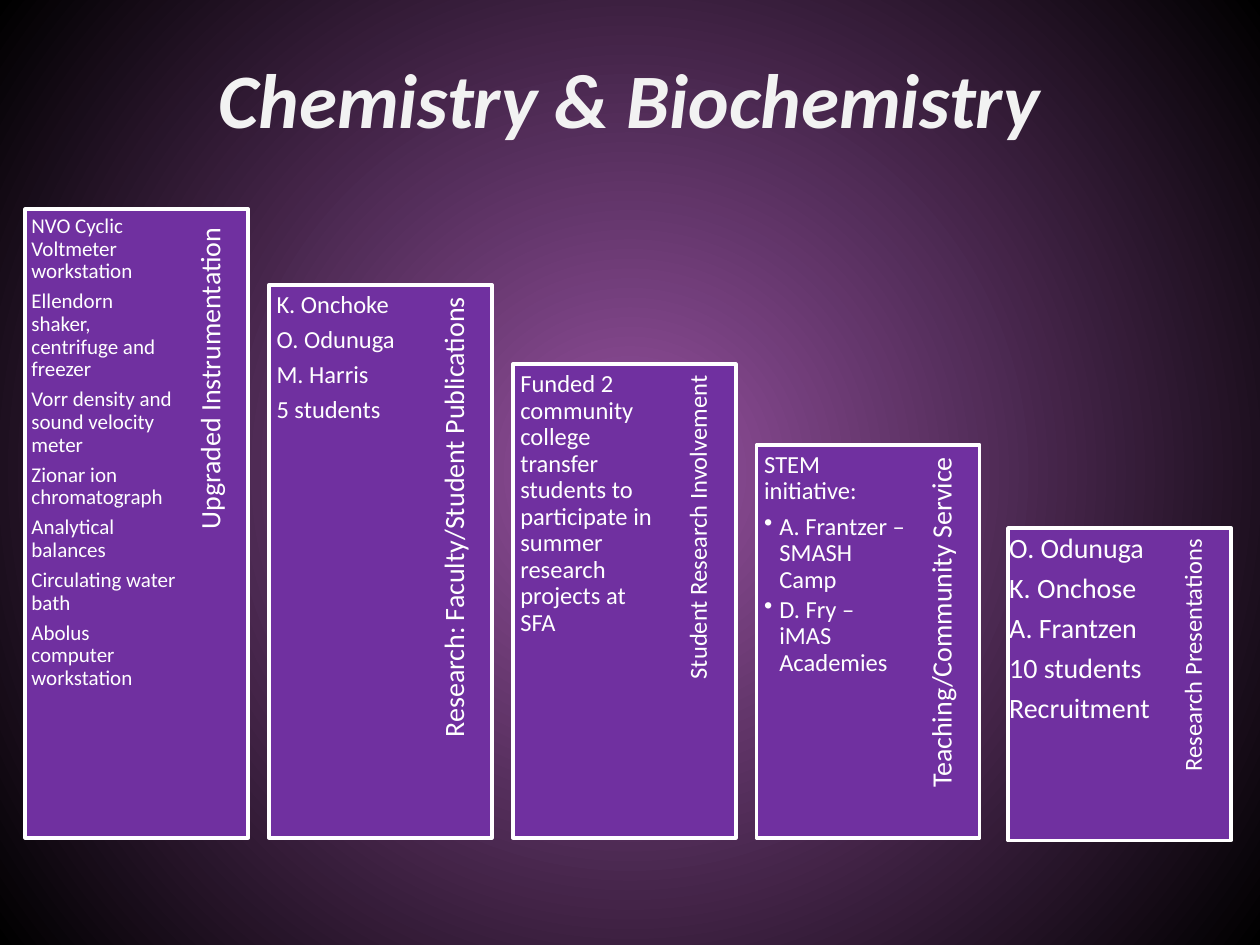
import pptx
import pptx.dml.color
import pptx.enum.shapes
import pptx.enum.text
import pptx.oxml
import pptx.oxml.ns
import pptx.util

WIDTH, HEIGHT = 10, 7.5
FONT = "Calibri"
WHITE, PURPLE, LILAC, BLACK, PALE = "FFFFFF", "7030A0", "9651A1", "000000", "F2F2F2"
FIRST_LEFT, COLUMN_PITCH, COLUMN_WIDTH, BASELINE = 0.2, 1.935, 1.77, 6.65
BODY_SHARE, LABEL_CENTRE_SHARE, LABEL_LENGTH_SHARE = 0.71, 0.84, 0.9
LABEL_THICKNESS = 0.46

COLUMNS = [
    {"top": 1.66, "label": "Upgraded Instrumentation ", "label_size": 16, "size": 12,
     "lines": ["NVO Cyclic Voltmeter workstation",
               "Ellendorn shaker, centrifuge and freezer",
               "Vorr density and sound velocity meter",
               "Zionar ion chromatograph", "Analytical balances",
               "Circulating water bath", "Abolus computer workstation"]},
    {"top": 2.26, "label": "Research: Faculty/Student Publications", "label_size": 16, "size": 14,
     "lines": ["K. Onchoke", "O. Odunuga", "M. Harris", "5 students"]},
    {"top": 2.89, "label": "Student Research Involvement", "label_size": 14, "size": 14,
     "lines": ["Funded 2 community college transfer students to participate "
               "in summer research projects at SFA"]},
    {"top": 3.53, "label": "Teaching/Community Service", "label_size": 16, "size": 14,
     "lines": ["STEM initiative:"],
     "bullets": ["A. Frantzer – SMASH Camp", "D. Fry – iMAS Academies"]},
    {"top": 4.17, "label": "Research Presentations", "label_size": 14, "size": 16,
     "panel_shift": (0.06, 0.02),
     "lines": ["O. Odunuga", "K. Onchose", "A. Frantzen", "10 students", "Recruitment"]},
]


def color(hex_string):
    """Return the colour for a hex string."""
    return pptx.dml.color.RGBColor.from_string(hex_string)


def inches(*lengths):
    """Convert lengths in inches to slide units."""
    return [pptx.util.Inches(length) for length in lengths]


def add_run(paragraph, text, size, hex_string=WHITE):
    """Append a formatted run to a paragraph and return it."""
    run = paragraph.add_run()
    run.text = text
    run.font.name = FONT
    run.font.size = pptx.util.Pt(size)
    run.font.color.rgb = color(hex_string)
    return run


def add_text_box(slide, box, margins):
    """Add a wrapping text box with the given left, top, right and bottom margins."""
    shape = slide.shapes.add_textbox(*inches(*box))
    frame = shape.text_frame
    frame.word_wrap = True
    (frame.margin_left, frame.margin_top,
     frame.margin_right, frame.margin_bottom) = inches(*margins)
    return shape


def space_paragraph(paragraph, size, share=0.35):
    """Set tight lines and a gap after the paragraph as a share of the text size."""
    paragraph.line_spacing = 0.9
    paragraph.space_after = pptx.util.Pt(round(size * share, 2))


def add_bullet(paragraph):
    """Give a paragraph a hanging round bullet."""
    properties = paragraph._p.get_or_add_pPr()
    indent = pptx.util.Inches(0.12)
    properties.set("marL", str(indent))
    properties.set("indent", str(-indent))
    bullet = pptx.oxml.parse_xml(
        f'<a:buChar {pptx.oxml.ns.nsdecls("a")} char="•"/>')
    properties.append(bullet)


def add_background(slide):
    """Fill the slide with a glow that fades from its centre."""
    fill = slide.background.fill
    fill.gradient()
    for stop, hex_string in zip(fill.gradient_stops, (LILAC, BLACK)):
        stop.color.rgb = color(hex_string)
    gradient = slide.element.find(".//" + pptx.oxml.ns.qn("a:gradFill"))
    gradient.remove(gradient.find(pptx.oxml.ns.qn("a:lin")))
    gradient.append(pptx.oxml.parse_xml(
        f'<a:path {pptx.oxml.ns.nsdecls("a")} path="circle">'
        '<a:fillToRect l="50000" t="50000" r="50000" b="50000"/></a:path>'))


def add_title(slide, box, text):
    """Place and format the slide title."""
    title = slide.shapes.title
    title.left, title.top, title.width, title.height = inches(*box)
    title.text_frame.vertical_anchor = pptx.enum.text.MSO_ANCHOR.MIDDLE
    paragraph = title.text_frame.paragraphs[0]
    paragraph.alignment = pptx.enum.text.PP_ALIGN.CENTER
    run = add_run(paragraph, text, 44, PALE)
    run.font.bold = True
    run.font.italic = True


def add_panel(slide, box):
    """Draw the outlined rectangle behind a column."""
    panel = slide.shapes.add_shape(
        pptx.enum.shapes.MSO_SHAPE.RECTANGLE, *inches(*box))
    panel.shadow.inherit = False
    panel.fill.solid()
    panel.fill.fore_color.rgb = color(PURPLE)
    panel.line.color.rgb = color(WHITE)
    panel.line.width = pptx.util.Pt(2)


def add_label(slide, panel_box, text, size):
    """Write the sideways heading along the right of a panel."""
    left, top, width, height = panel_box
    length = height * LABEL_LENGTH_SHARE
    centre_x = left + width * LABEL_CENTRE_SHARE
    centre_y = top + length / 2
    margin = (size - 2) / 200
    box = (centre_x - length / 2, centre_y - LABEL_THICKNESS / 2, length, LABEL_THICKNESS)
    label = add_text_box(slide, box, (margin, 0, margin + 0.03, 0.02))
    label.rotation = 270
    label.text_frame.vertical_anchor = pptx.enum.text.MSO_ANCHOR.MIDDLE
    paragraph = label.text_frame.paragraphs[0]
    paragraph.alignment = pptx.enum.text.PP_ALIGN.RIGHT
    space_paragraph(paragraph, size)
    add_run(paragraph, text, size)


def add_body(slide, box, lines, bullets, size):
    """Write the lines and bullets of a column."""
    frame = add_text_box(slide, box, [(size - 2) / 200] * 4).text_frame
    for index, text in enumerate(lines + bullets):
        paragraph = frame.add_paragraph() if index else frame.paragraphs[0]
        is_bullet = index >= len(lines)
        if is_bullet:
            paragraph.level = 1
            add_bullet(paragraph)
        space_paragraph(paragraph, size, 0.15 if is_bullet else 0.35)
        add_run(paragraph, text, size)


def add_column(slide, box, column):
    """Build one column from its panel, sideways label and body."""
    left, top, width, height = box
    shift_x, shift_y = column.get("panel_shift", (0, 0))
    panel_box = (left + shift_x, top + shift_y, width, height)
    add_panel(slide, panel_box)
    add_label(slide, panel_box, column["label"], column["label_size"])
    add_body(slide, (left, top, width * BODY_SHARE, height),
             column["lines"], column.get("bullets", []), column["size"])


def main():
    """Build and save the presentation."""
    presentation = pptx.Presentation()
    presentation.slide_width, presentation.slide_height = inches(WIDTH, HEIGHT)
    slide = presentation.slides.add_slide(presentation.slide_layouts[5])
    add_background(slide)
    add_title(slide, (0, 0, WIDTH, 1.55), "Chemistry & Biochemistry")
    for index, column in enumerate(COLUMNS):
        left = FIRST_LEFT + index * COLUMN_PITCH
        top = column["top"]
        add_column(slide, (left, top, COLUMN_WIDTH, BASELINE - top), column)
    presentation.save("out.pptx")


if __name__ == "__main__":
    main()
